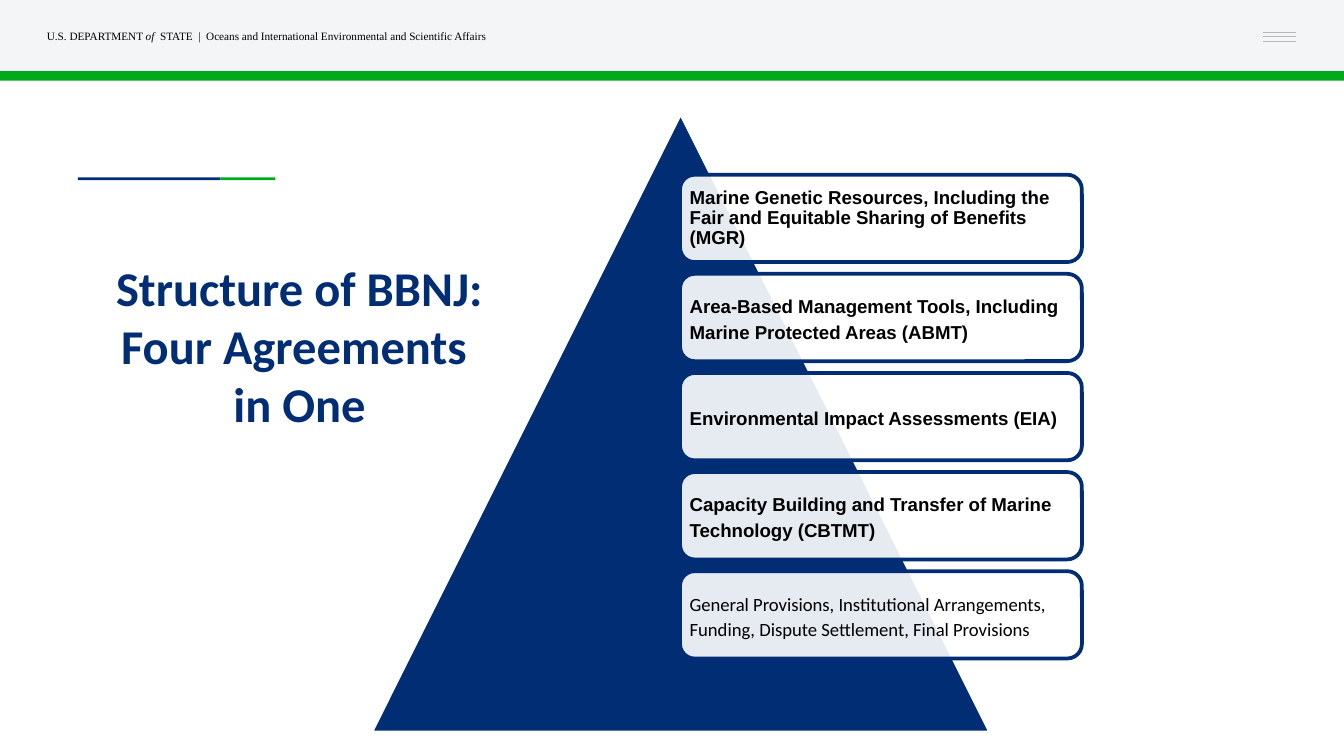
from typing import NamedTuple

from lxml import etree
from pptx import Presentation
from pptx.dml.color import RGBColor
from pptx.enum import shapes, text
from pptx.oxml import ns
from pptx.util import Inches, Pt

NAVY, GREEN, PALE, GREY = "002D74", "00A91C", "F4F5F6", "B7B7B7"
WHITE, BLACK = "FFFFFF", "000000"
SHAPE = shapes.MSO_SHAPE


class Bar(NamedTuple):
    left: float
    top: float
    width: float
    height: float
    color: str


class Agreement(NamedTuple):
    label: str
    font: str = "Arial"
    bold: bool = True
    spacing: float = 1.15


BARS = [
    Bar(0, 0, 10, 0.53, PALE),
    Bar(0, 0.53, 10, 0.07, GREEN),
    Bar(0.58, 1.32, 1.06, 0.02, NAVY),
    Bar(1.64, 1.32, 0.41, 0.02, GREEN),
]
AGREEMENTS = [
    Agreement("Marine Genetic Resources, Including the Fair and Equitable "
              "Sharing of Benefits (MGR)", spacing=0.9),
    Agreement("Area-Based Management Tools, Including Marine Protected Areas (ABMT)"),
    Agreement("Environmental Impact Assessments (EIA)"),
    Agreement("Capacity Building and Transfer of Marine Technology (CBTMT)"),
    Agreement("General Provisions, Institutional Arrangements, Funding, "
              "Dispute Settlement, Final Provisions", "Calibri", False),
]
FIRST_TOP, LAST_TOP = 1.3, 4.25
STEP = (LAST_TOP - FIRST_TOP) / (len(AGREEMENTS) - 1)


def paint(target, color: str) -> None:
    """Give a fill or line format a solid colour."""
    target.solid()
    target.fore_color.rgb = RGBColor.from_string(color)


def add_solid(page, kind, left: float, top: float, width: float, height: float,
              fill: str, line: str | None = None):
    shape = page.shapes.add_shape(kind, Inches(left), Inches(top),
                                  Inches(width), Inches(height))
    shape.shadow.inherit = False
    paint(shape.fill, fill)
    if line:
        paint(shape.line.fill, line)
        shape.line.width = Pt(2)
    else:
        shape.line.fill.background()
    return shape


def set_frame(frame, inset: float, anchor) -> None:
    frame.word_wrap = True
    frame.vertical_anchor = anchor
    frame.margin_left = frame.margin_right = Inches(inset)
    frame.margin_top = frame.margin_bottom = Inches(inset)


def set_font(para, name: str, size: float, color: str, bold: bool = False) -> None:
    para.font.name = name
    para.font.size = Pt(size)
    para.font.bold = bold
    paint(para.font.fill, color)


def add_text_box(page, left: float, top: float, width: float, height: float, anchor):
    """Add a text box and return its first paragraph."""
    box = page.shapes.add_textbox(Inches(left), Inches(top),
                                  Inches(width), Inches(height))
    set_frame(box.text_frame, 0.1, anchor)
    return box.text_frame.paragraphs[0]


def add_menu_line(page, y: float) -> None:
    line = page.shapes.add_connector(shapes.MSO_CONNECTOR.STRAIGHT, Inches(9.4),
                                     Inches(y), Inches(9.64), Inches(y))
    paint(line.line.fill, GREY)
    line.line.width = Pt(0.75)
    etree.SubElement(line._element.spPr, ns.qn("a:effectLst"))


def add_agreement(page, item: Agreement, top: float) -> None:
    box = add_solid(page, SHAPE.ROUNDED_RECTANGLE, 5.06, top, 2.99, 0.65, WHITE, NAVY)
    color = box._element.spPr.find(ns.qn("a:solidFill"))[0]
    etree.SubElement(color, ns.qn("a:alpha"), val="90000")
    set_frame(box.text_frame, 0.04, text.MSO_ANCHOR.MIDDLE)
    para = box.text_frame.paragraphs[0]
    para.text = item.label
    para.alignment = text.PP_ALIGN.LEFT
    para.line_spacing = item.spacing
    set_font(para, item.font, 10, BLACK, item.bold)


def main() -> None:
    deck = Presentation()
    deck.slide_width = Inches(10)
    deck.slide_height = deck.slide_width * 9 // 16
    page = deck.slides.add_slide(deck.slide_layouts[6])

    for bar in BARS:
        add_solid(page, SHAPE.RECTANGLE, *bar)
    for y in (0.24, 0.27, 0.31):
        add_menu_line(page, y)

    header = add_text_box(page, 0.25, 0.09, 3.75, 0.35, text.MSO_ANCHOR.MIDDLE)
    for words, italic in (
        ("U.S. DEPARTMENT ", False),
        ("of ", True),
        (" STATE  |  Oceans and International Environmental and Scientific Affairs", False),
    ):
        span = header.add_run()
        span.text = words
        span.font.italic = italic
    set_font(header, "Times New Roman", 6, BLACK)

    add_solid(page, SHAPE.ISOSCELES_TRIANGLE, 2.76, 0.84, 4.61, 4.61, NAVY, WHITE)
    for index, item in enumerate(AGREEMENTS):
        add_agreement(page, item, FIRST_TOP + index * STEP)

    title = add_text_box(page, 0.43, 1.82, 3.6, 1.53, text.MSO_ANCHOR.TOP)
    title.text = "Structure of BBNJ:\vFour Agreements \vin One"
    title.alignment = text.PP_ALIGN.CENTER
    set_font(title, "Calibri", 26, NAVY, True)

    deck.save("out.pptx")


if __name__ == "__main__":
    main()
